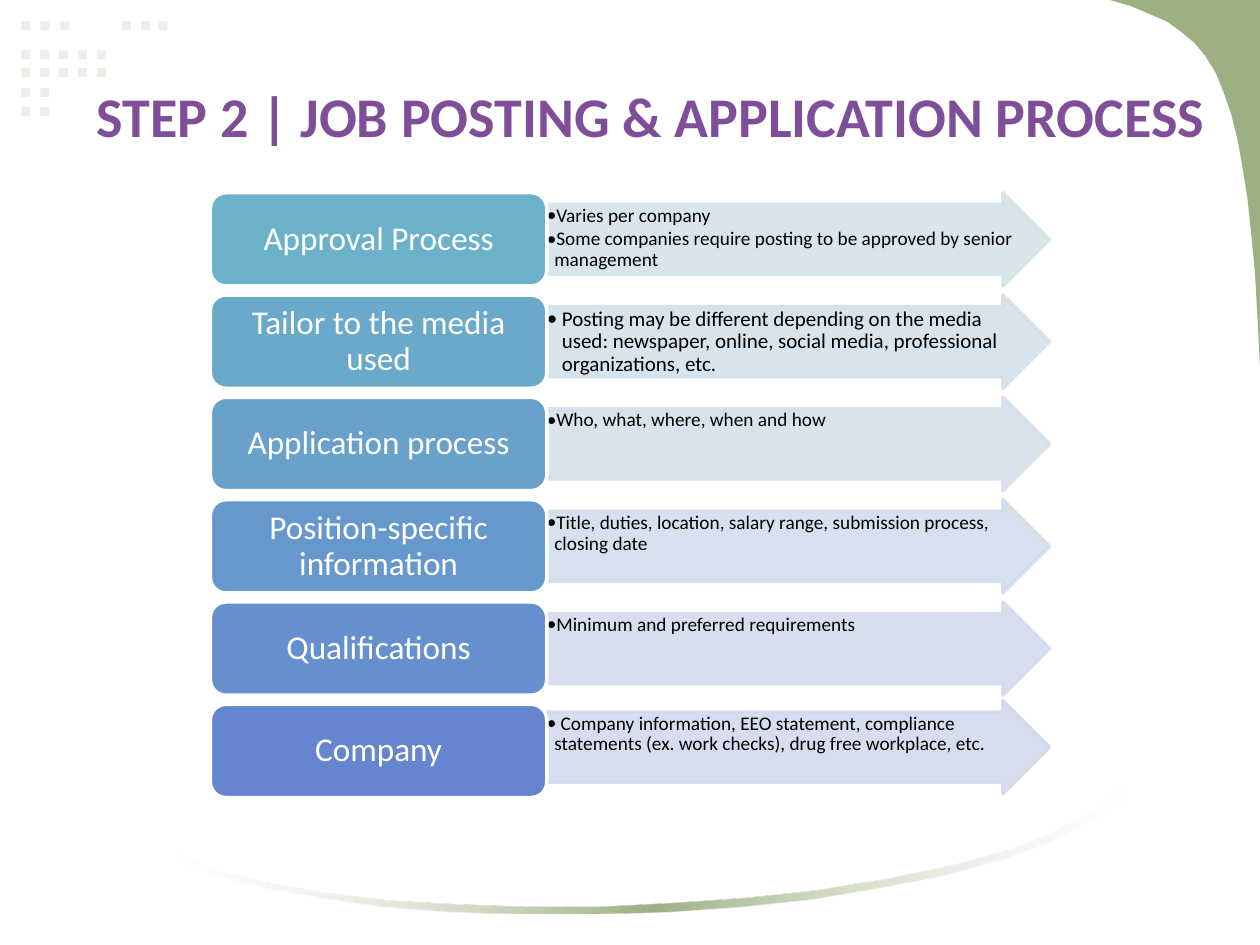
from lxml.etree import SubElement
from pptx import Presentation
from pptx.dml.color import RGBColor
from pptx.enum.shapes import MSO_SHAPE
from pptx.enum.text import MSO_ANCHOR, PP_ALIGN
from pptx.oxml.ns import qn
from pptx.util import Inches, Pt

# Content: label, box colour, arrow colour, bullet size, hanging indent, bullets
TITLE = "STEP 2 | JOB POSTING & APPLICATION PROCESS"
STEPS = [
    ("Approval Process", "6BB1C9", "D4E4EB", 11, 0.06,
     ["Varies per company",
      "Some companies require posting to be approved by senior management"]),
    ("Tailor to the media used", "6AA9CA", "D4E2EC", 12, 0.12,
     ["Posting may be different depending on the media used: newspaper, "
      "online, social media, professional organizations, etc."]),
    ("Application process", "69A1CB", "D4E0EC", 11, 0.06,
     ["Who, what, where, when and how"]),
    ("Position-specific information", "6798CD", "D3DEED", 11, 0.06,
     ["Title, duties, location, salary range, submission process, closing date"]),
    ("Qualifications", "668FCE", "D3DBED", 11, 0.06,
     ["Minimum and preferred requirements"]),
    ("Company", "6585CF", "D3D9ED", 11, 0.06,
     [" Company information, EEO statement, compliance statements "
      "(ex. work checks), drug free workplace, etc."]),
]

THEME = {
    "font": "Calibri", "title": "7E4E99", "label": "FFFFFF", "detail": "000000",
    "dot": "EBEFE6", "green": "9CB084", "white": "FFFFFF",
    "title_size": 32, "label_size": 19, "outline": 2,
}

# Decoration: dot rows as (top, lefts), then the outlines
DOT_SIZE = 0.07
DOT_ROWS = [
    (0.17, [0.17, 0.32, 0.48, 0.97, 1.12, 1.26]),
    (0.40, [0.17, 0.32, 0.47, 0.62, 0.77]),
    (0.54, [0.17, 0.32, 0.47, 0.62, 0.77]),
    (0.70, [0.17, 0.32]),
    (0.85, [0.17, 0.32]),
]
CORNER = [
    (8.81, 0), (10, 0), (10, 2.91), (9.98, 2.52), (9.96, 2.17), (9.93, 1.85),
    (9.9, 1.57), (9.86, 1.32), (9.82, 1.1), (9.77, 0.9), (9.71, 0.73),
    (9.65, 0.58), (9.57, 0.45), (9.48, 0.34), (9.37, 0.25), (9.26, 0.17),
    (9.12, 0.11), (8.98, 0.05),
]
SWOOSH = [
    (8.92, 6.25), (8.92, 6.32), (8.67, 6.5), (8.35, 6.67), (7.95, 6.82),
    (7.5, 6.94), (7, 7.04), (6.46, 7.13), (5.89, 7.19), (5.31, 7.23),
    (4.72, 7.25), (4.14, 7.25), (3.57, 7.23), (3.04, 7.19), (2.55, 7.12),
    (2.1, 7.04), (1.72, 6.94), (1.42, 6.82), (1.42, 6.79), (1.73, 6.91),
    (2.12, 7), (2.57, 7.08), (3.07, 7.14), (3.61, 7.17), (4.17, 7.19),
    (4.76, 7.19), (5.34, 7.16), (5.93, 7.12), (6.49, 7.06), (7.03, 6.97),
    (7.53, 6.87), (7.98, 6.75), (8.37, 6.6), (8.68, 6.44),
]
SWOOSH_STOPS = [(0, "white", 30), (50, "green", 100), (100, "white", 30)]

# Layout of the step rows
FIRST_TOP, LAST_TOP, ROW_HEIGHT = 1.53, 5.59, 0.74
BOX_LEFT, BOX_WIDTH = 1.67, 2.67
ARROW_LEFT, ARROW_WIDTH = 4.33, 4
LAST_ARROW_LIFT = 0.03


def rgb(color):
    return RGBColor.from_string(color)


def paint(shape, fill, line=None):
    shape.shadow.inherit = False
    shape.fill.solid()
    shape.fill.fore_color.rgb = rgb(fill)
    if line:
        shape.line.color.rgb = rgb(line)
        shape.line.width = Pt(THEME["outline"])
    else:
        shape.line.fill.background()


def add_alpha(color_element, percent):
    SubElement(color_element, qn("a:alpha"), val=str(percent * 1000))


def outline(slide, points):
    # The builder rounds to whole units, so it is given lengths in EMU
    corners = [(Inches(x), Inches(y)) for x, y in points]
    builder = slide.shapes.build_freeform(*corners[0])
    builder.add_line_segments(corners[1:], close=True)
    return builder.convert_to_shape()


def set_frame(frame, anchor, inset_x, inset_y):
    frame.word_wrap = True
    frame.vertical_anchor = anchor
    frame.margin_left = frame.margin_right = Inches(inset_x)
    frame.margin_top = frame.margin_bottom = Inches(inset_y)


def style(paragraph, size, color, align=PP_ALIGN.LEFT, bold=False):
    paragraph.alignment = align
    for run in paragraph.runs:
        run.font.name = THEME["font"]
        run.font.size = Pt(size)
        run.font.bold = bold
        run.font.color.rgb = rgb(color)


def add_decoration(slide):
    for top, lefts in DOT_ROWS:
        for left in lefts:
            dot = slide.shapes.add_shape(
                MSO_SHAPE.RECTANGLE, Inches(left), Inches(top),
                Inches(DOT_SIZE), Inches(DOT_SIZE))
            paint(dot, THEME["dot"])
    paint(outline(slide, CORNER), THEME["green"])

    # Swoosh fading out at both ends
    swoosh = outline(slide, SWOOSH)
    paint(swoosh, THEME["green"])
    swoosh.fill.gradient()
    swoosh.fill.gradient_angle = 0
    stops = next(swoosh._element.spPr.iter(qn("a:gsLst")))
    for old_stop in list(stops):
        stops.remove(old_stop)
    for position, color, opacity in SWOOSH_STOPS:
        stop = SubElement(stops, qn("a:gs"), pos=str(position * 1000))
        add_alpha(SubElement(stop, qn("a:srgbClr"), val=THEME[color]), opacity)


def add_title(slide):
    title = slide.shapes.add_textbox(
        Inches(0.67), Inches(0.44), Inches(9.15), Inches(0.94))
    frame = title.text_frame
    set_frame(frame, MSO_ANCHOR.MIDDLE, 0.1, 0.05)
    frame.text = TITLE
    style(frame.paragraphs[0], THEME["title_size"], THEME["title"], bold=True)


def add_arrow(slide, top, color, size, indent, bullets):
    arrow = slide.shapes.add_shape(
        MSO_SHAPE.RIGHT_ARROW, Inches(ARROW_LEFT), Inches(top),
        Inches(ARROW_WIDTH), Inches(ROW_HEIGHT))
    arrow.adjustments[0] = 0.75
    arrow.adjustments[1] = 0.5
    paint(arrow, color, color)
    for color_element in arrow._element.spPr.iter(qn("a:srgbClr")):
        add_alpha(color_element, 90)
    frame = arrow.text_frame
    set_frame(frame, MSO_ANCHOR.TOP, 0.01, 0.01)
    frame.text = "\n".join(bullets)
    for paragraph in frame.paragraphs:
        style(paragraph, size, THEME["detail"])
        paragraph.line_spacing = 0.9
        paragraph.space_after = Pt(0.15 * size)
        properties = paragraph._p.get_or_add_pPr()
        properties.set("marL", str(Inches(indent)))
        properties.set("indent", str(-Inches(indent)))
        SubElement(properties, qn("a:buFont"), typeface=THEME["font"])
        SubElement(properties, qn("a:buChar"), char="•")


def add_label(slide, top, color, label):
    box = slide.shapes.add_shape(
        MSO_SHAPE.ROUNDED_RECTANGLE, Inches(BOX_LEFT), Inches(top),
        Inches(BOX_WIDTH), Inches(ROW_HEIGHT))
    paint(box, color, THEME["white"])
    frame = box.text_frame
    set_frame(frame, MSO_ANCHOR.MIDDLE, 0.08, 0.04)
    frame.text = label
    style(frame.paragraphs[0], THEME["label_size"], THEME["label"], PP_ALIGN.CENTER)
    frame.paragraphs[0].line_spacing = 0.9


def main():
    deck = Presentation()
    deck.slide_width, deck.slide_height = Inches(10), Inches(7.5)
    slide = deck.slides.add_slide(deck.slide_layouts[6])
    add_decoration(slide)
    add_title(slide)

    # One arrow and one label per step, evenly spaced
    last = len(STEPS) - 1
    pitch = (LAST_TOP - FIRST_TOP) / last
    for row, (label, box_color, arrow_color, size, indent, bullets) in enumerate(STEPS):
        top = FIRST_TOP + row * pitch
        lift = LAST_ARROW_LIFT if row == last else 0
        add_arrow(slide, top - lift, arrow_color, size, indent, bullets)
        add_label(slide, top, box_color, label)
    deck.save("out.pptx")


if __name__ == "__main__":
    main()
